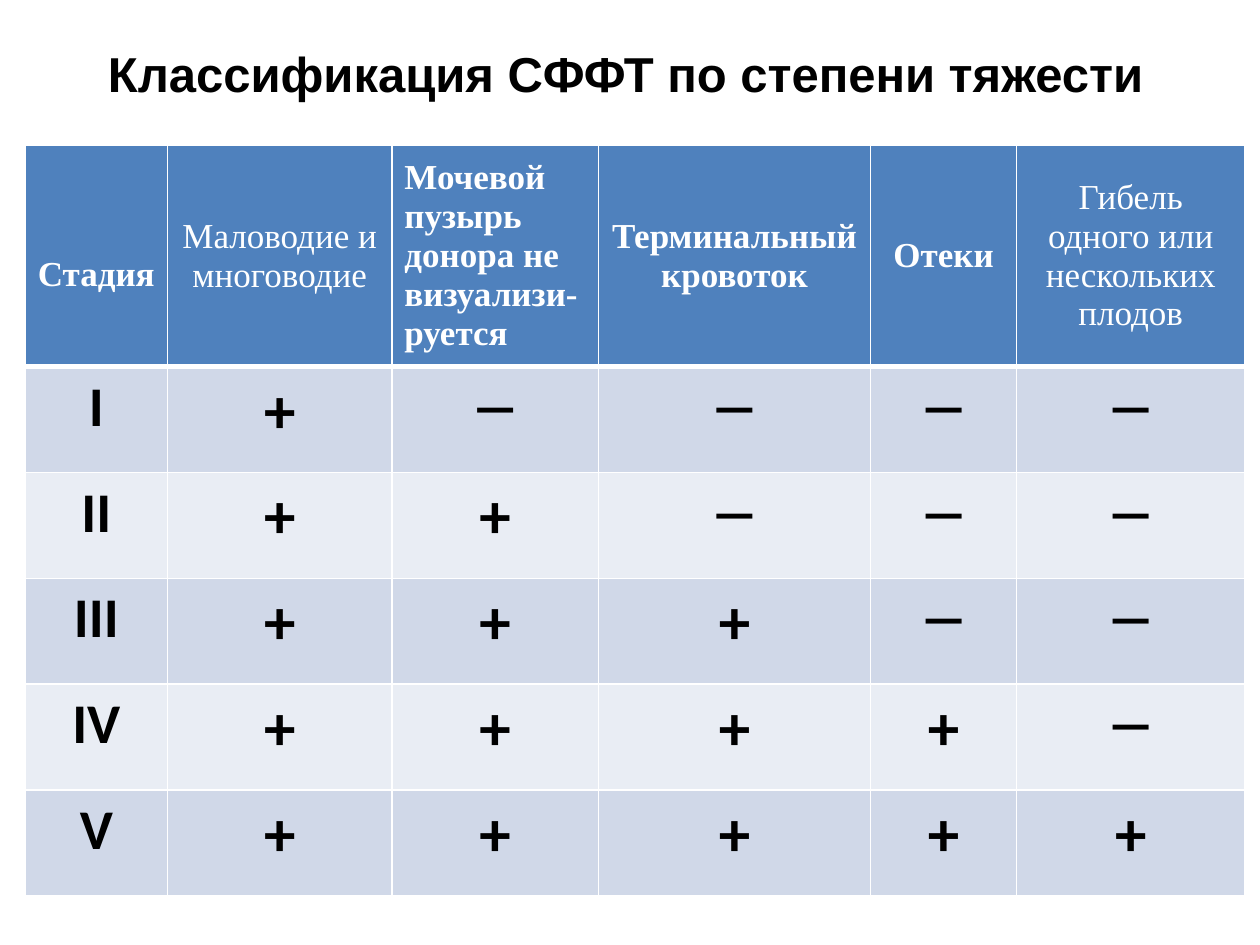
from lxml.etree import SubElement
from pptx import Presentation
from pptx.dml.color import RGBColor
from pptx.enum.text import MSO_ANCHOR, PP_ALIGN
from pptx.oxml.ns import qn
from pptx.util import Inches, Pt

BLACK = RGBColor(0x00, 0x00, 0x00)
WHITE = RGBColor(0xFF, 0xFF, 0xFF)
HEADER_BLUE = RGBColor(0x4F, 0x81, 0xBD)
BANDS = (RGBColor(0xD0, 0xD8, 0xE8), RGBColor(0xE9, 0xED, 0xF4))

COLUMN_WIDTHS = (1.13, 1.78, 1.64, 2.16, 1.16, 1.81)
HEADER_HEIGHT, STAGE_HEIGHT = 1.76, 0.84

# Text, bold, alignment
HEADINGS = (
    ("Стадия", True, PP_ALIGN.LEFT),
    ("Маловодие и многоводие", False, PP_ALIGN.CENTER),
    ("Мочевой пузырь донора не визуализи-\nруется", True, PP_ALIGN.LEFT),
    ("Терминальный кровоток", True, PP_ALIGN.CENTER),
    ("Отеки", True, PP_ALIGN.CENTER),
    ("Гибель одного или нескольких плодов", False, PP_ALIGN.CENTER),
)
STAGES = ("І", "ІІ", "ІІІ", "ІV", "V")
PLUS, DASH = "+", "―"


def set_borders(cell, bottom=1):
    properties = cell._tc.get_or_add_tcPr()
    for side, width in (("L", 1), ("R", 1), ("T", 1), ("B", bottom)):
        line = SubElement(properties, qn(f"a:ln{side}"), w=str(Pt(width)))
        SubElement(SubElement(line, qn("a:solidFill")), qn("a:srgbClr"), val=str(WHITE))


def set_font(paragraph, name, size, color, bold=True):
    font = paragraph.font
    font.name, font.size, font.bold = name, Pt(size), bold
    font.color.rgb = color


def fill_cell(cell, text, fill, align, bottom=1, **font):
    set_borders(cell, bottom)
    cell.fill.solid()
    cell.fill.fore_color.rgb = fill
    cell.text = text
    for paragraph in cell.text_frame.paragraphs:
        paragraph.alignment = align
        set_font(paragraph, **font)


def add_title(slide, text):
    title = slide.shapes.title
    title.left, title.top = Inches(0.12), Inches(0.29)
    title.width, title.height = Inches(9.69), Inches(0.57)
    title.text_frame.text = text
    heading = title.text_frame.paragraphs[0]
    heading.alignment = PP_ALIGN.CENTER
    set_font(heading, "Arial", 28, BLACK)


def add_severity_table(slide):
    height = HEADER_HEIGHT + STAGE_HEIGHT * len(STAGES)
    table = slide.shapes.add_table(
        len(STAGES) + 1, len(HEADINGS), Inches(0.2), Inches(1.15),
        Inches(sum(COLUMN_WIDTHS)), Inches(height)).table
    for column, width in zip(table.columns, COLUMN_WIDTHS):
        column.width = Inches(width)
    for row in table.rows:
        row.height = Inches(STAGE_HEIGHT)
    table.rows[0].height = Inches(HEADER_HEIGHT)

    # Header row
    for cell, (text, bold, align) in zip(table.rows[0].cells, HEADINGS):
        fill_cell(cell, text, HEADER_BLUE, align, bottom=3,
                  name="Times New Roman", size=20, color=WHITE, bold=bold)
        cell.vertical_anchor = MSO_ANCHOR.MIDDLE
    # The stage heading sits below the middle of its cell
    stage_heading = table.cell(0, 0)
    stage_heading.margin_top = Inches(0.35)
    stage_heading.margin_right = Inches(0.05)

    # Each stage adds one more sign to those of the stage before
    for number, stage in enumerate(STAGES, start=1):
        signs = [PLUS if sign <= number else DASH for sign in range(1, len(HEADINGS))]
        for cell, text in zip(table.rows[number].cells, [stage] + signs):
            fill_cell(cell, text, BANDS[(number - 1) % 2], PP_ALIGN.CENTER,
                      name="Calibri", size=36 if text == PLUS else 32, color=BLACK)


def main():
    presentation = Presentation()
    presentation.slide_width = Inches(10)
    presentation.slide_height = Inches(7.5)
    slide = presentation.slides.add_slide(presentation.slide_layouts[5])
    add_title(slide, "Классификация СФФТ по степени тяжести")
    add_severity_table(slide)
    presentation.save("out.pptx")


if __name__ == "__main__":
    main()
